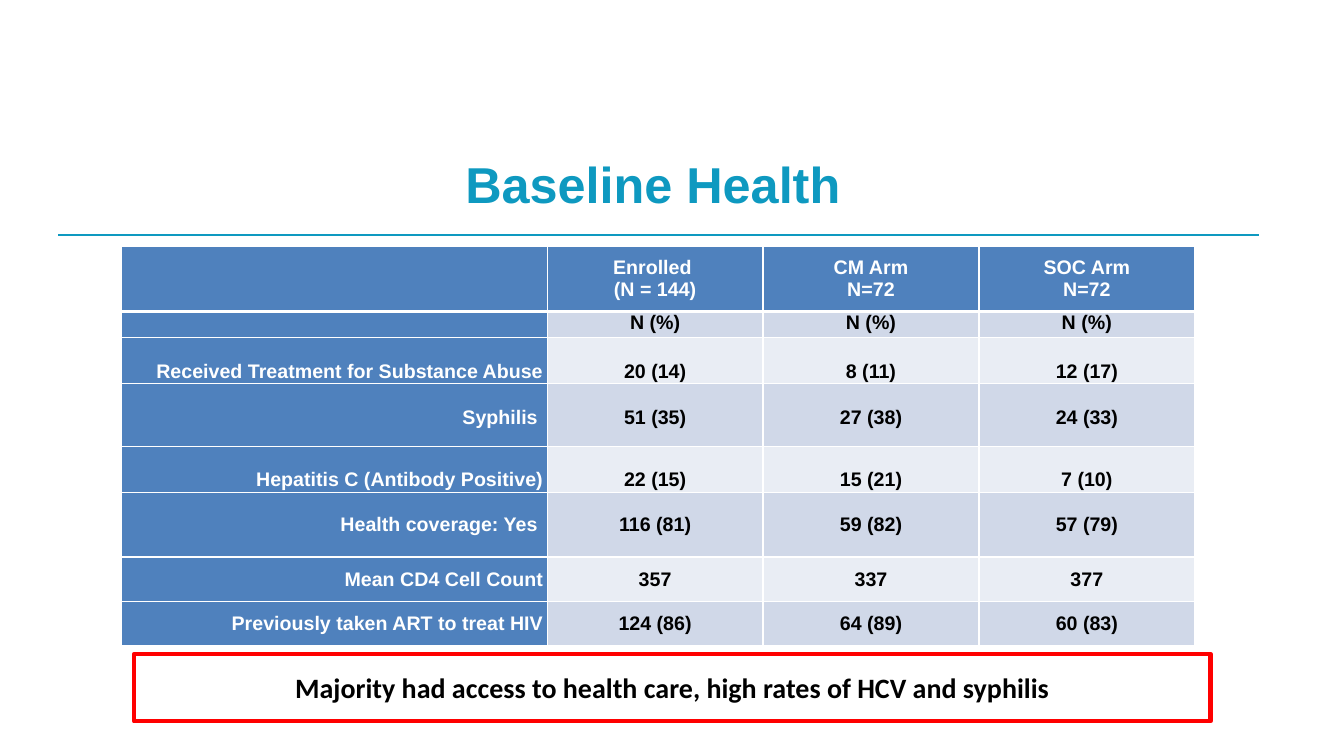
from lxml import etree
from pptx import Presentation
from pptx.dml.color import RGBColor
from pptx.enum.shapes import MSO_CONNECTOR, MSO_SHAPE
from pptx.enum.text import MSO_ANCHOR, PP_ALIGN
from pptx.oxml.ns import qn
from pptx.util import Cm, Pt

TOP, MIDDLE = MSO_ANCHOR.TOP, MSO_ANCHOR.MIDDLE
CENTER, RIGHT = PP_ALIGN.CENTER, PP_ALIGN.RIGHT
STRAIGHT, RECT = MSO_CONNECTOR.STRAIGHT, MSO_SHAPE.RECTANGLE

COLORS = {
    "teal": "0E99C0", "blue": "4F81BD", "red": "FF0000", "white": "FFFFFF",
    "black": "000000", "dark": "D0D8E8", "light": "E9EDF4",
}
FORMATS = {
    "title": {"name": "Arial", "size": Pt(36), "bold": True},
    "cell": {"name": "Arial", "size": Pt(14), "bold": True},
    "note": {"name": "Calibri", "size": Pt(20), "bold": True},
}
LINE = 0.57  # height of one line of cell text, in cm
WIDTHS = [10.74, 5.44, 5.44, 5.44]

# Row height, anchor, top margin, cell texts
ROWS = [
    (1.65, MIDDLE, 0, ["", "Enrolled \n(N = 144)", "CM Arm\nN=72", "SOC Arm\nN=72"]),
    (0.66, TOP, 0, ["", "N (%)", "N (%)", "N (%)"]),
    (1.14, TOP, LINE, ["Received Treatment for Substance Abuse",
                       "20 (14)", "8 (11)", "12 (17)"]),
    (1.57, TOP, LINE, ["Syphilis ", "51 (35)", "27 (38)", "24 (33)"]),
    (1.14, TOP, LINE, ["Hepatitis C (Antibody Positive)",
                       "22 (15)", "15 (21)", "7 (10)"]),
    (1.63, MIDDLE, 0, ["Health coverage: Yes ", "116 (81)", "59 (82)", "57 (79)"]),
    (1.12, MIDDLE, 0, ["Mean CD4 Cell Count", "357", "337", "377"]),
    (1.12, MIDDLE, 0, ["Previously taken ART to treat HIV",
                       "124 (86)", "64 (89)", "60 (83)"]),
]


def rgb(name):
    return RGBColor.from_string(COLORS[name])


def write(frame, text, style, color, align=CENTER):
    frame.text = text
    for para in frame.paragraphs:
        para.alignment = align
        for run in para.runs:
            for key, value in FORMATS[style].items():
                setattr(run.font, key, value)
            run.font.color.rgb = rgb(color)
        if not para.runs:
            size = FORMATS[style]["size"].centipoints
            etree.SubElement(para._p, qn("a:endParaRPr"), sz=str(size))


def edge(cell, side, width):
    props = cell._tc.get_or_add_tcPr()
    line = etree.SubElement(props, qn(f"a:ln{side}"), w=str(Pt(width)))
    fill = etree.SubElement(line, qn("a:solidFill"))
    etree.SubElement(fill, qn("a:srgbClr"), val=COLORS["white"])


def add_title(slide, left, top, width, height):
    box = slide.shapes.add_textbox(Cm(left), Cm(top), Cm(width), Cm(height))
    frame = box.text_frame
    frame.word_wrap = True
    frame.vertical_anchor = MIDDLE
    write(frame, "Baseline Health", "title", "teal")
    # Rule along the foot of the title
    start, base = left + 0.28, top + height
    rule = slide.shapes.add_connector(
        STRAIGHT, Cm(start), Cm(base), Cm(start + 30.25), Cm(base))
    rule.line.color.rgb = rgb("teal")
    rule.line.width = Pt(2)
    etree.SubElement(rule._element.spPr, qn("a:effectLst"))


def add_grid(slide, left, top):
    height = sum(row[0] for row in ROWS)
    grid = slide.shapes.add_table(
        len(ROWS), len(WIDTHS), Cm(left), Cm(top),
        Cm(sum(WIDTHS)), Cm(height)).table
    for col, width in zip(grid.columns, WIDTHS):
        col.width = Cm(width)
    for r, (tall, anchor, inset, texts) in enumerate(ROWS):
        grid.rows[r].height = Cm(tall)
        for c, text in enumerate(texts):
            cell = grid.cell(r, c)
            head = r == 0 or c == 0
            band = "dark" if r % 2 else "light"
            form = {"margin_left": Cm(0.1), "margin_right": Cm(0.1),
                    "margin_top": Cm(inset), "margin_bottom": 0,
                    "vertical_anchor": anchor}
            for key, value in form.items():
                setattr(cell, key, value)
            # Thick edge below the header row
            sides = {"L": 1, "R": 1, "T": 3 if r == 1 else 1, "B": 1 if r else 3}
            for side, width in sides.items():
                edge(cell, side, width)
            cell.fill.solid()
            cell.fill.fore_color.rgb = rgb("blue" if head else band)
            write(cell.text_frame, text, "cell", "white" if head else "black",
                  CENTER if c else RIGHT)


def add_note(slide, left, top, width, height):
    box = slide.shapes.add_shape(RECT, Cm(left), Cm(top), Cm(width), Cm(height))
    box.shadow.inherit = False
    box.fill.solid()
    box.fill.fore_color.rgb = rgb("white")
    box.line.color.rgb = rgb("red")
    box.line.width = Pt(3)
    box.text_frame.vertical_anchor = MIDDLE
    write(box.text_frame,
          "Majority had access to health care, high rates of HCV and syphilis",
          "note", "black")


def main():
    deck = Presentation()
    deck.slide_width, deck.slide_height = Cm(33.87), Cm(19.05)
    slide = deck.slides.add_slide(deck.slide_layouts[6])
    add_title(slide, 1.19, 3.3, 30.53, 2.62)
    add_grid(slide, 3.05, 6.2)
    add_note(slide, 3.38, 16.48, 27.13, 1.7)
    deck.save("out.pptx")


if __name__ == "__main__":
    main()
